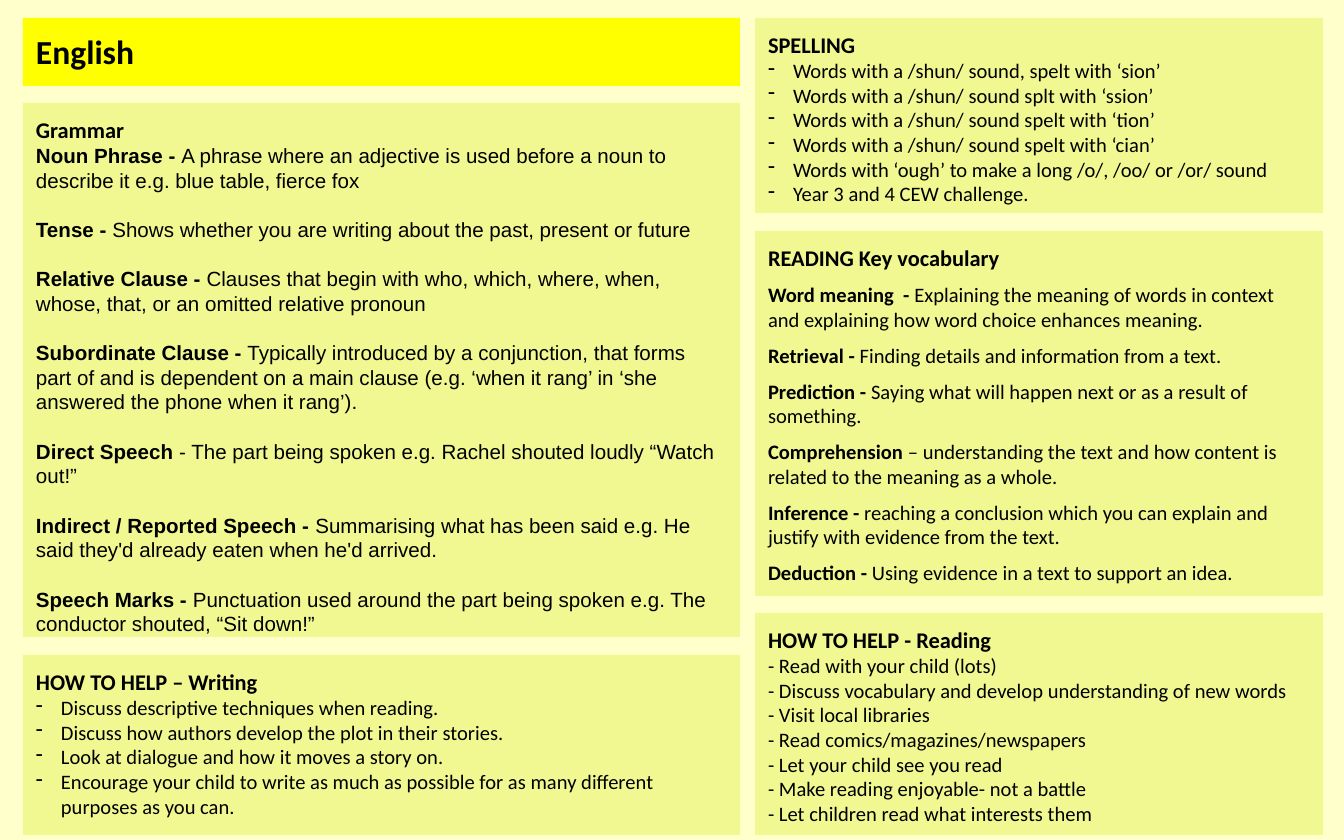
import pptx
import pptx.dml.color
import pptx.enum.shapes
import pptx.enum.text
import pptx.oxml.ns
import pptx.util
from lxml import etree

EMU_PER_PX = 914400 / 134.4
SLIDE_WIDTH, SLIDE_HEIGHT = 1344, 840
LEFT, LEFT_WIDTH = 23, 717
RIGHT, RIGHT_WIDTH = 755, 568
INSET = 13
BULLET_INDENT = 25

CREAM = pptx.dml.color.RGBColor(0xFF, 0xFF, 0xCC)
YELLOW = pptx.dml.color.RGBColor(0xFF, 0xFF, 0x00)
LIME = pptx.dml.color.RGBColor(0xF1, 0xF8, 0x92)
BLACK = pptx.dml.color.RGBColor(0x00, 0x00, 0x00)

TITLE = {"name": "Calibri", "size": pptx.util.Pt(18), "bold": True}
HEADING = {"name": "Calibri", "size": pptx.util.Pt(12), "bold": True}
BODY = {"name": "Calibri", "size": pptx.util.Pt(11), "bold": False}
TERM = {**BODY, "bold": True}
ARIAL = {"name": "Arial"}
BODY_LINE = pptx.util.Pt(13.2)

GRAMMAR = [
    ("Noun Phrase - ", "A phrase where an adjective is used before a noun to describe it e.g. blue table, fierce fox"),
    ("Tense - ", "Shows whether you are writing about the past, present or future"),
    ("Relative Clause -", " Clauses that begin with who, which, where, when, whose, that, or an omitted relative pronoun"),
    ("Subordinate Clause -", " Typically introduced by a conjunction, that forms part of and is dependent on a main "
                             "clause (e.g. ‘when it rang’ in ‘she answered the phone when it rang’)."),
    ("Direct Speech", " - The part being spoken e.g. Rachel shouted loudly “Watch out!”"),
    ("Indirect / Reported Speech - ", "Summarising what has been said e.g. He said they'd already eaten when he'd arrived."),
    ("Speech Marks - ", "Punctuation used around the part being spoken e.g. The conductor shouted, “Sit down!”"),
]
READING_VOCABULARY = [
    ("Word meaning  -", " Explaining the meaning of words in context and explaining how word choice enhances meaning."),
    ("Retrieval - ", "Finding details and information from a text."),
    ("Prediction - ", "Saying what will happen next or as a result of something."),
    ("Comprehension", " – understanding the text and how content is related to the meaning as a whole."),
    ("Inference -", " reaching a conclusion which you can explain and justify with evidence from the text."),
    ("Deduction - ", "Using evidence in a text to support an idea."),
]
SPELLING = [
    "Words with a /shun/ sound, spelt with ‘sion’",
    "Words with a /shun/ sound splt with ‘ssion’",
    "Words with a /shun/ sound spelt with ‘tion’",
    "Words with a /shun/ sound spelt with ‘cian’",
    "Words with ‘ough’ to make a long /o/, /oo/ or /or/ sound",
    "Year 3 and 4 CEW challenge.",
]
WRITING_HELP = [
    "Discuss descriptive techniques when reading.",
    "Discuss how authors develop the plot in their stories.",
    "Look at dialogue and how it moves a story on.",
    "Encourage your child to write as much as possible for as many different purposes as you can.",
]
READING_HELP = [
    "- Read with your child (lots)",
    "- Discuss vocabulary and develop understanding of new words",
    "- Visit local libraries",
    "- Read comics/magazines/newspapers",
    "- Let your child see you read",
    "- Make reading enjoyable- not a battle",
    "- Let children read what interests them",
]


def px(length):
    return pptx.util.Emu(round(length * EMU_PER_PX))


def add_run(paragraph, text, font_format):
    run = paragraph.add_run()
    run.text = text
    for attribute, value in font_format.items():
        setattr(run.font, attribute, value)
    run.font.color.rgb = BLACK


def add_dash_bullet(paragraph):
    properties = paragraph._p.get_or_add_pPr()
    properties.set("marL", str(px(BULLET_INDENT)))
    properties.set("indent", str(-px(BULLET_INDENT)))
    bullet = etree.SubElement(properties, pptx.oxml.ns.qn("a:buChar"))
    bullet.set("char", "-")


def add_panel(slide, box, fill, heading, heading_format):
    """Draw a filled panel with its heading and return its text frame."""
    panel = slide.shapes.add_shape(pptx.enum.shapes.MSO_SHAPE.RECTANGLE, *map(px, box))
    panel.shadow.inherit = False
    panel.fill.solid()
    panel.fill.fore_color.rgb = fill
    panel.line.fill.background()
    frame = panel.text_frame
    frame_format = {"word_wrap": True, "vertical_anchor": pptx.enum.text.MSO_ANCHOR.TOP}
    frame_format.update({f"margin_{side}": px(INSET) for side in ("left", "top", "right", "bottom")})
    for attribute, value in frame_format.items():
        setattr(frame, attribute, value)
    frame.paragraphs[0].alignment = pptx.enum.text.PP_ALIGN.LEFT
    add_run(frame.paragraphs[0], heading, heading_format)
    return frame


def add_body_paragraph(frame, space_before=0):
    paragraph = frame.add_paragraph()
    paragraph.alignment = pptx.enum.text.PP_ALIGN.LEFT
    paragraph.line_spacing = BODY_LINE
    paragraph.space_before = pptx.util.Pt(space_before)
    return paragraph


def add_list_panel(slide, box, heading, items, bulleted):
    frame = add_panel(slide, box, LIME, heading, HEADING)
    for item in items:
        paragraph = add_body_paragraph(frame)
        if bulleted:
            add_dash_bullet(paragraph)
        add_run(paragraph, item, BODY)


def add_glossary_panel(slide, box, heading, entries, first_gap, gap, typeface):
    """Fill a panel with bold terms, each followed by its meaning."""
    frame = add_panel(slide, box, LIME, heading, HEADING)
    for index, (term, meaning) in enumerate(entries):
        paragraph = add_body_paragraph(frame, gap if index else first_gap)
        add_run(paragraph, term, {**TERM, **typeface})
        add_run(paragraph, meaning, {**BODY, **typeface})


def main():
    presentation = pptx.Presentation()
    presentation.slide_width = px(SLIDE_WIDTH)
    presentation.slide_height = px(SLIDE_HEIGHT)
    slide = presentation.slides.add_slide(presentation.slide_layouts[6])
    slide.background.fill.solid()
    slide.background.fill.fore_color.rgb = CREAM

    add_panel(slide, (LEFT, 18, LEFT_WIDTH, 68), YELLOW, "English", TITLE)
    add_glossary_panel(slide, (LEFT, 103, LEFT_WIDTH, 534), "Grammar", GRAMMAR, 0, 13.2, ARIAL)
    add_list_panel(slide, (LEFT, 655, LEFT_WIDTH, 180), "HOW TO HELP – Writing", WRITING_HELP, True)

    add_list_panel(slide, (RIGHT, 18, RIGHT_WIDTH, 195), "SPELLING", SPELLING, True)
    add_glossary_panel(slide, (RIGHT, 231, RIGHT_WIDTH, 365), "READING Key vocabulary",
                       READING_VOCABULARY, 6, 6, {})
    add_list_panel(slide, (RIGHT, 613, RIGHT_WIDTH, 222), "HOW TO HELP - Reading", READING_HELP, False)

    presentation.save("out.pptx")


if __name__ == "__main__":
    main()
